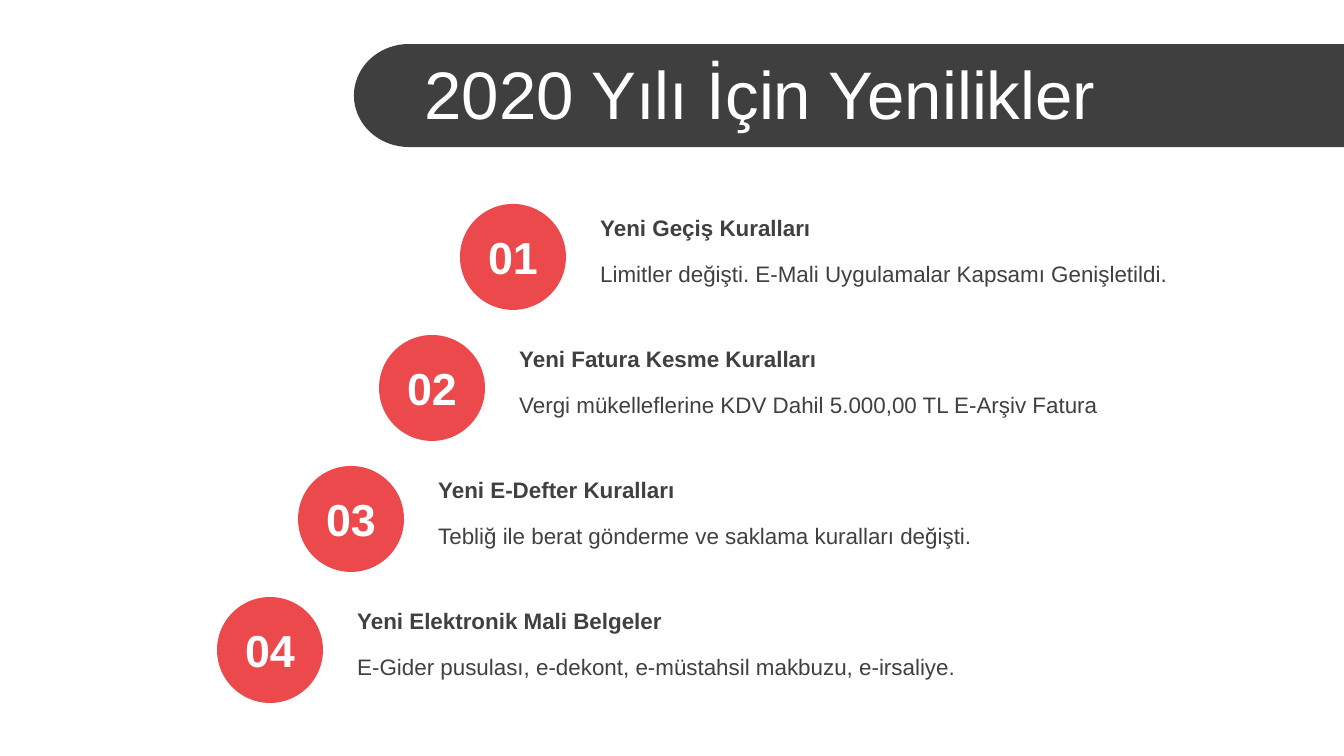
"""Build a slide with a title bar and four numbered items in a staircase."""
import math

import pptx
import pptx.dml.color
import pptx.enum.shapes
import pptx.enum.text
import pptx.util

SCALE = 914400 / 134.4
COLORS = {"bar": "3F3F3F", "text": "404040", "badge": "EB494B", "white": "FFFFFF"}
ITEMS = [
    ("Yeni Geçiş Kuralları", "Limitler değişti. E-Mali Uygulamalar Kapsamı Genişletildi."),
    ("Yeni Fatura Kesme Kuralları", "Vergi mükelleflerine KDV Dahil 5.000,00 TL E-Arşiv Fatura"),
    ("Yeni E-Defter Kuralları", "Tebliğ ile berat gönderme ve saklama kuralları değişti."),
    ("Yeni Elektronik Mali Belgeler", "E-Gider pusulası, e-dekont, e-müstahsil makbuzu, e-irsaliye."),
]


def emu(px):
    return pptx.util.Emu(round(px * SCALE))


def color(name):
    return pptx.dml.color.RGBColor.from_string(COLORS[name])


class Deck:
    def __init__(self, wide, high, font):
        self.font = font
        self.show = pptx.Presentation()
        self.show.slide_width, self.show.slide_height = emu(wide), emu(high)
        self.slide = self.show.slides.add_slide(self.show.slide_layouts[5])

    def paint(self, shape, fill):
        shape.shadow.inherit = False
        shape.fill.solid()
        shape.fill.fore_color.rgb = color(fill)
        shape.line.fill.background()

    def letter(self, shape, text, size, tint, bold=False,
               align=pptx.enum.text.PP_ALIGN.LEFT):
        frame = shape.text_frame
        frame.word_wrap = True
        frame.auto_size = pptx.enum.text.MSO_AUTO_SIZE.NONE
        frame.vertical_anchor = pptx.enum.text.MSO_ANCHOR.MIDDLE
        para = frame.paragraphs[0]
        para.alignment = align
        run = para.add_run()
        run.text = text
        run.font.name, run.font.size = self.font, pptx.util.Pt(size)
        run.font.bold = bold
        run.font.color.rgb = color(tint)

    def bar(self, left, top, wide, high, curve):
        mid = top + high / 2
        turns = [math.radians(90 + 5 * step) for step in range(37)]
        arc = [(left + curve + curve * math.cos(turn), mid + high / 2 * math.sin(turn))
               for turn in turns]
        right = left + wide
        dots = [(emu(x), emu(y)) for x, y in [(right, top + high), *arc]]
        form = self.slide.shapes.build_freeform(emu(right), emu(top), scale=1.0)
        form.add_line_segments(dots, close=True)
        self.paint(form.convert_to_shape(), "bar")

    def title(self, text, left, top, wide, high):
        shape = self.slide.shapes.title
        tree = shape.element.getparent()
        tree.append(shape.element)
        shape.left, shape.top = emu(left), emu(top)
        shape.width, shape.height = emu(wide), emu(high)
        self.letter(shape, text, 36, "white")

    def badge(self, text, left, top, size):
        kind = pptx.enum.shapes.MSO_SHAPE.OVAL
        shape = self.slide.shapes.add_shape(kind, emu(left), emu(top), emu(size), emu(size))
        self.paint(shape, "badge")
        frame = shape.text_frame
        frame.margin_left = frame.margin_right = 0
        self.letter(shape, text, 24, "white", True, pptx.enum.text.PP_ALIGN.CENTER)

    def label(self, text, left, top, bold=False):
        box = self.slide.shapes.add_textbox(emu(left), emu(top), emu(677), emu(41))
        self.letter(box, text, 12, "text", bold)


def main():
    deck = Deck(1344, 756, "Arial")
    deck.bar(354, 44, 990, 103, 55)
    deck.title("2020 Yılı İçin Yenilikler", 411, 50, 933, 85)
    for row, (head, body) in enumerate(ITEMS):
        left, top = 460 - 81 * row, 204 + 131 * row
        deck.badge(f"{row + 1:02}", left, top, 106)
        deck.label(head, left + 127, top + 3, True)
        deck.label(body, left + 127, top + 49)
    deck.show.save("out.pptx")


if __name__ == "__main__":
    main()
